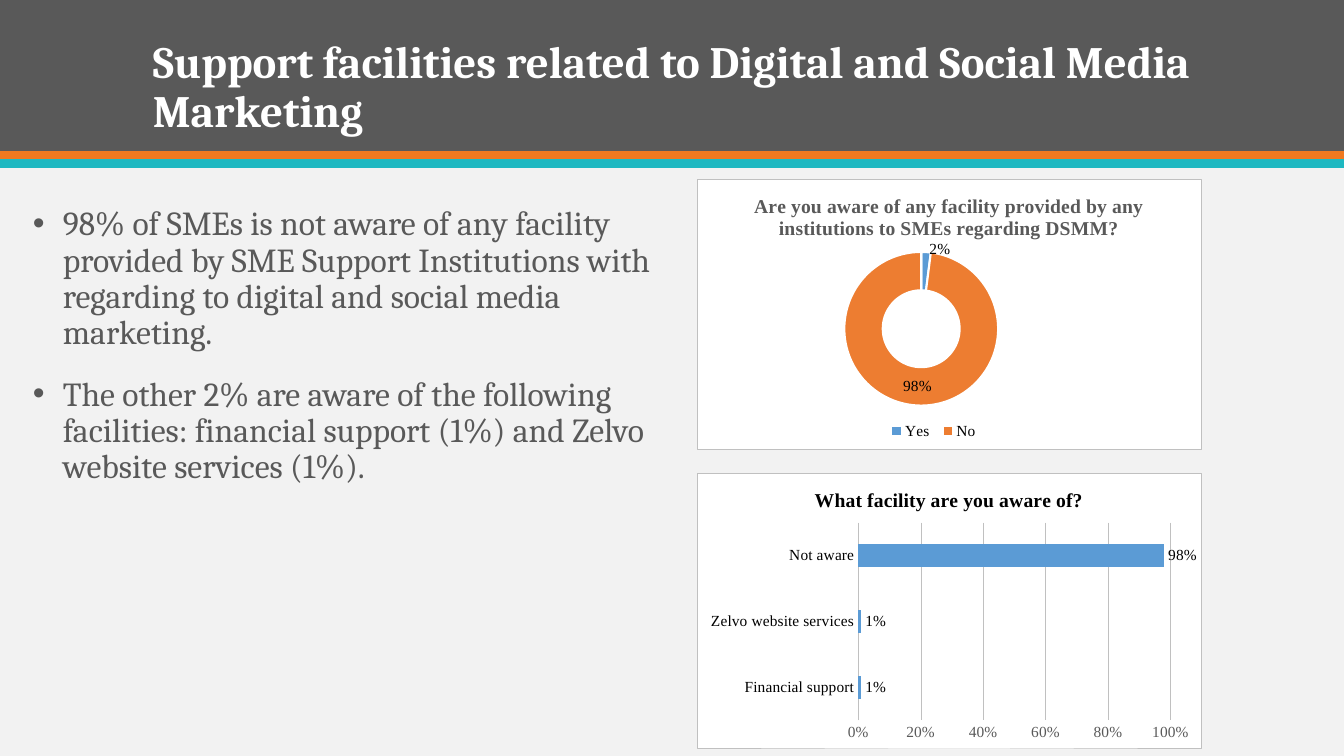
from lxml import etree
from pptx import Presentation
from pptx import util as u
from pptx.chart import data as chart_data
from pptx.dml import color
from pptx.enum import chart as charts, shapes, text
from pptx.oxml import ns, parse_xml

PX = 914400 / 100.8
COLORS = {
    "header": "595959",
    "orange_stripe": "EF7920",
    "teal_stripe": "1EB8C1",
    "background": "F2F2F2",
    "white": "FFFFFF",
    "black": "000000",
    "grey": "595959",
    "rule": "C0C0C0",
    "blue": "5B9BD5",
    "orange": "ED7D31",
}
BULLETS = [
    "98% of SMEs is not aware of any facility provided by SME Support "
    "Institutions with regarding to digital and social media marketing.",
    "The other 2% are aware of the following facilities: financial support "
    "(1%) and Zelvo website services (1%).",
]


def px(value):
    return u.Emu(round(value * PX))


def rgb(name):
    return color.RGBColor.from_string(COLORS[name])


def layout_xml(inner=False, **values):
    layout = etree.Element(ns.qn("c:layout"), nsmap={"c": ns.nsuri("c")})
    manual = etree.SubElement(layout, ns.qn("c:manualLayout"))
    if inner:
        etree.SubElement(manual, ns.qn("c:layoutTarget"), val="inner")
    if "w" in values:
        for mode in ("xMode", "yMode"):
            etree.SubElement(manual, ns.qn(f"c:{mode}"), val="edge")
    for key, value in values.items():
        etree.SubElement(manual, ns.qn(f"c:{key}"), val=str(value))
    return layout


class SlideBuilder:
    body_font = "Cambria"
    chart_font = "Times New Roman"

    def __init__(self, slide):
        self.slide = slide

    def style(self, font, name, size, color_name, bold=False):
        font.name = name
        font.size = u.Pt(size)
        font.bold = bold
        font.color.rgb = rgb(color_name)

    def background(self, color_name):
        fill = self.slide.background.fill
        fill.solid()
        fill.fore_color.rgb = rgb(color_name)

    def band(self, top, height, color_name):
        shape = self.slide.shapes.add_shape(
            shapes.MSO_SHAPE.RECTANGLE, 0, px(top), px(1344), px(height))
        shape.shadow.inherit = False
        shape.fill.solid()
        shape.fill.fore_color.rgb = rgb(color_name)
        shape.line.fill.background()

    def text_box(self, box, lines, size, color_name, bold=False,
                 anchor=text.MSO_ANCHOR.TOP, bullets=False):
        shape = self.slide.shapes.add_textbox(*map(px, box))
        frame = shape.text_frame
        frame.word_wrap = True
        frame.vertical_anchor = anchor
        frame.text = "\n".join(lines)
        for paragraph in frame.paragraphs:
            paragraph.line_spacing = 0.9
            self.style(paragraph.runs[0].font, self.body_font, size, color_name, bold)
            if bullets:
                paragraph.space_before = u.Pt(18)
                properties = paragraph._p.get_or_add_pPr()
                properties.set("marL", str(px(30)))
                properties.set("indent", str(px(-30)))
                etree.SubElement(properties, ns.qn("a:buFont"), typeface="Arial")
                etree.SubElement(properties, ns.qn("a:buChar"), char="•")

    def chart(self, kind, box, title, title_color, categories, values, plot_layout):
        data = chart_data.CategoryChartData(number_format="0%")
        data.categories = categories
        data.add_series("Series 1", values)
        chart = self.slide.shapes.add_chart(kind, *map(px, box), data).chart
        self.style(chart.font, "Calibri", 10, "black")
        chart.has_legend = False
        chart.has_title = True
        frame = chart.chart_title.text_frame
        frame.text = title
        self.style(frame.paragraphs[0].runs[0].font, self.chart_font, 14, title_color, True)
        self.chart_frame(chart)

        plot_area = chart.element.find(".//" + ns.qn("c:plotArea"))
        for layout in plot_area.findall(ns.qn("c:layout")):
            plot_area.remove(layout)
        plot_area.insert(0, layout_xml(inner=True, **plot_layout))

        plot = chart.plots[0]
        plot.has_data_labels = True
        labels = plot.data_labels
        labels.show_value = True
        labels.show_percentage = False
        labels.number_format = "0%"
        labels.number_format_is_linked = False
        self.style(labels.font, self.chart_font, 11, "black")
        return chart

    def chart_frame(self, chart):
        properties = parse_xml(
            f'<c:spPr {ns.nsdecls("c", "a")}>'
            f'<a:solidFill><a:srgbClr val="{COLORS["white"]}"/></a:solidFill>'
            f'<a:ln w="{u.Pt(0.25)}"><a:solidFill>'
            f'<a:srgbClr val="{COLORS["rule"]}"/></a:solidFill></a:ln></c:spPr>')
        chart.element.find(ns.qn("c:chart")).addnext(properties)

    def doughnut_chart(self, box, title, categories, values, point_colors):
        chart = self.chart(
            charts.XL_CHART_TYPE.DOUGHNUT, box, title, "grey", categories, values,
            dict(x=0.29, y=0.27, w=0.31, h=0.57))
        plot = chart.plots[0]
        plot.vary_by_categories = True
        chart.element.find(".//" + ns.qn("c:holeSize")).set("val", "75")
        series = plot.series[0]
        for index, color_name in enumerate(point_colors):
            point_format = series.points[index].format
            point_format.fill.solid()
            point_format.fill.fore_color.rgb = rgb(color_name)
            point_format.line.color.rgb = rgb("white")
            point_format.line.width = u.Pt(1.5)
        self.style(series.points[0].data_label.font, self.chart_font, 11, "black")
        label = series._element.find(".//" + ns.qn("c:dLbl"))
        label.find(ns.qn("c:idx")).addnext(layout_xml(x=0.03, y=-0.08))
        series_labels = series.data_labels
        series_labels.show_value = True
        series_labels.show_percentage = False
        series_labels.number_format = "0%"
        series_labels.number_format_is_linked = False
        self.style(series_labels.font, self.chart_font, 11, "black")

        chart.has_legend = True
        legend = chart.legend
        legend.position = charts.XL_LEGEND_POSITION.RIGHT
        legend.include_in_layout = False
        self.style(legend.font, self.chart_font, 11, "black")
        position = legend._element.find(ns.qn("c:legendPos"))
        for layout in legend._element.findall(ns.qn("c:layout")):
            legend._element.remove(layout)
        position.addnext(layout_xml(x=0.37, y=0.89, w=0.2, h=0.09))

    def bar_chart(self, box, title, categories, values):
        chart = self.chart(
            charts.XL_CHART_TYPE.BAR_CLUSTERED, box, title, "black", categories, values,
            dict(x=0.32, y=0.18, w=0.62, h=0.72))
        plot = chart.plots[0]
        plot.vary_by_categories = False
        plot.gap_width = 182
        plot.data_labels.position = charts.XL_LABEL_POSITION.OUTSIDE_END
        fill = plot.series[0].format.fill
        fill.solid()
        fill.fore_color.rgb = rgb("blue")

        for axis, color_name in ((chart.category_axis, "black"), (chart.value_axis, "grey")):
            axis.major_tick_mark = charts.XL_TICK_MARK.NONE
            axis.minor_tick_mark = charts.XL_TICK_MARK.NONE
            self.style(axis.tick_labels.font, self.chart_font, 11, color_name)
        axis = chart.value_axis
        axis.minimum_scale, axis.maximum_scale, axis.major_unit = 0, 1, 0.2
        axis.tick_labels.number_format = "0%"
        axis.tick_labels.number_format_is_linked = False
        axis.format.line.fill.background()
        for line in (chart.category_axis.format.line, axis.major_gridlines.format.line):
            line.color.rgb = rgb("rule")
            line.width = u.Pt(0.25)


def main():
    presentation = Presentation()
    presentation.slide_width, presentation.slide_height = px(1344), px(756)
    slide = presentation.slides.add_slide(presentation.slide_layouts[6])
    builder = SlideBuilder(slide)
    builder.background("background")
    builder.band(0, 151, "header")
    builder.band(151, 9, "orange_stripe")
    builder.band(159, 9, "teal_stripe")
    builder.text_box(
        (143, 28, 1058, 114),
        ["Support facilities related to Digital and Social Media Marketing"],
        32, "white", bold=True, anchor=text.MSO_ANCHOR.BOTTOM)
    builder.text_box((23, 202, 656, 479), BULLETS, 24, "grey", bullets=True)
    builder.doughnut_chart(
        (697, 179, 504, 270),
        "Are you aware of any facility provided by any institutions to SMEs regarding DSMM?",
        ["Yes", "No"], [0.02, 0.98], ["blue", "orange"])
    builder.bar_chart(
        (697, 473, 504, 275), "What facility are you aware of?",
        ["Financial support", "Zelvo website services", "Not aware"], [0.01, 0.01, 0.98])
    presentation.save("out.pptx")


if __name__ == "__main__":
    main()
